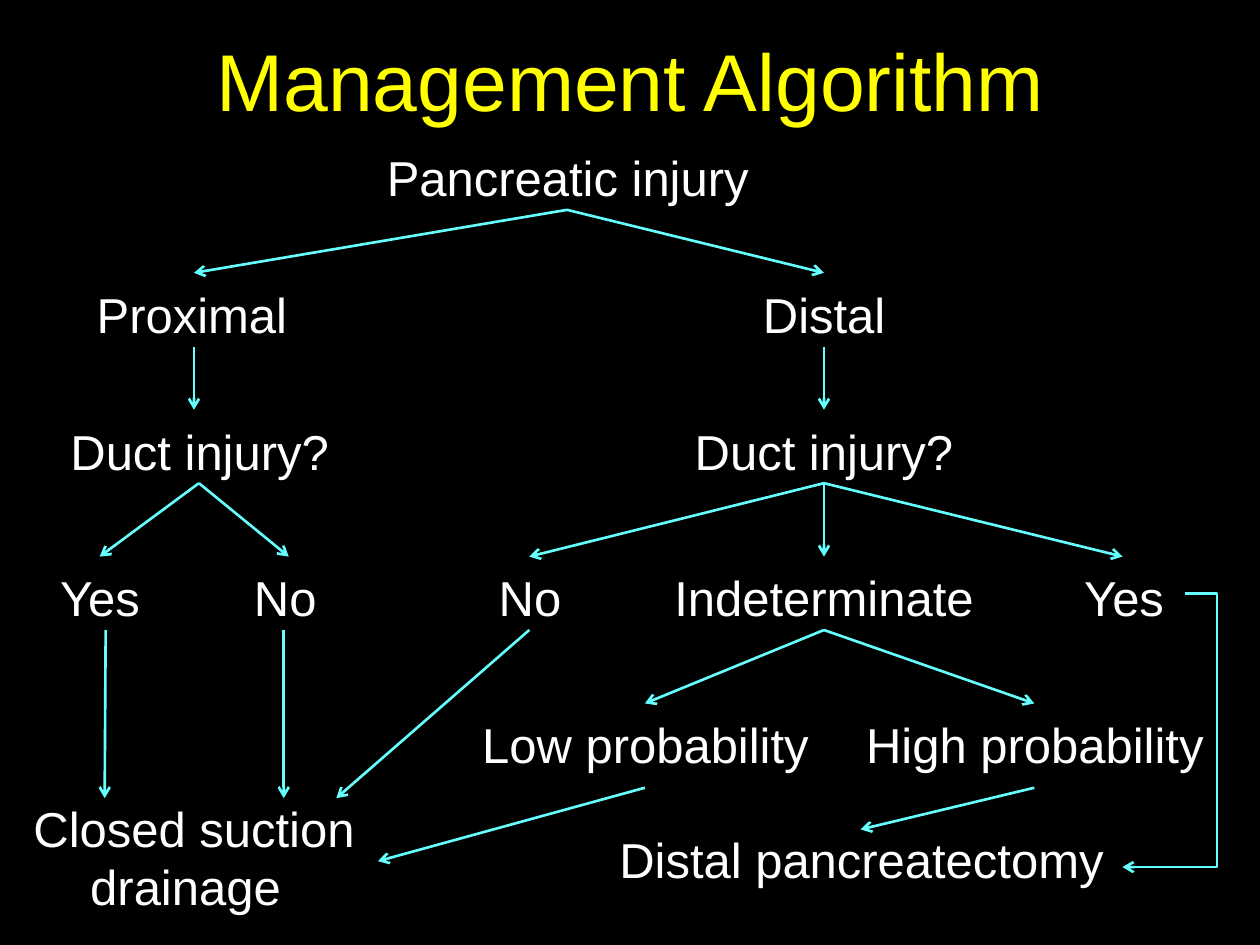
from dataclasses import dataclass

from lxml.etree import SubElement
from pptx import Presentation
from pptx.dml.color import RGBColor
from pptx.enum.shapes import MSO_CONNECTOR
from pptx.enum.text import MSO_ANCHOR, PP_ALIGN
from pptx.oxml.ns import qn
from pptx.slide import Slide
from pptx.util import Cm, Pt

BLACK, WHITE, YELLOW, CYAN = "000000", "FFFFFF", "FFFF00", "66FFFF"

# Top and bottom of each level of the tree, in centimetres
ROOT_TOP, ROOT_END = 2.75, 4.23
SITE_TOP, SITE_END = 5.5, 6.99
DUCT_TOP, DUCT_END = 8.26, 9.74
ANSWER_TOP, ANSWER_END = 11.22, 12.7
CHANCE_TOP, CHANCE_END = 14.18, 15.88
DRAINAGE_TOP, RESECTION_TOP = 16.09, 16.72
DISTAL_AXIS = 16.61


@dataclass
class Label:
    lines: tuple[str, ...]
    left: float
    top: float
    width: float
    height: float = 1.48
    align: PP_ALIGN = PP_ALIGN.CENTER
    spacing: float = 1.0
    size: float = 28
    color: str = WHITE
    anchor: MSO_ANCHOR = MSO_ANCHOR.TOP
    inset_top: float = 0.23


@dataclass
class Arrow:
    start: tuple[float, float]
    end: tuple[float, float]
    bend: float | None = None


TITLE = Label(("Management Algorithm",), 0, 0, 25.4, 3.18, size=46, color=YELLOW,
              anchor=MSO_ANCHOR.MIDDLE, inset_top=0.13)

LABELS = [
    Label(("Pancreatic injury",), 7.42, ROOT_TOP, 8.05),
    Label(("Proximal",), 1.7, SITE_TOP, 4.45, align=PP_ALIGN.LEFT),
    Label(("Distal",), 13.34, SITE_TOP, 6.55),
    Label(("Duct injury?",), 0.85, DUCT_TOP, 6.35),
    Label(("Duct injury?",), 12.7, DUCT_TOP, 7.82),
    Label(("Yes",), 0.64, ANSWER_TOP, 2.75),
    Label(("No",), 4.87, ANSWER_TOP, 1.91, align=PP_ALIGN.LEFT),
    Label(("No",), 9.73, ANSWER_TOP, 1.91),
    Label(("Indeterminate",), 12.7, ANSWER_TOP, 7.82),
    Label(("Yes",), 21.39, ANSWER_TOP, 2.54),
    Label(("Low probability",), 9.3, CHANCE_TOP, 7.42, 1.7),
    Label(("High probability",), 17.15, CHANCE_TOP, 7.42, 1.7),
    Label(("Closed suction", "drainage"), 0.2, DRAINAGE_TOP, 7.42, 2.54, spacing=0.8),
    Label(("Distal pancreatectomy",), 12.07, RESECTION_TOP, 10.59, spacing=0.8),
]

ARROWS = [
    # Site of the injury
    Arrow((11.43, ROOT_END), (3.91, SITE_TOP)),
    Arrow((11.43, ROOT_END), (DISTAL_AXIS, SITE_TOP)),
    # Question about the duct
    Arrow((3.91, SITE_END), (3.91, DUCT_TOP)),
    Arrow((DISTAL_AXIS, SITE_END), (DISTAL_AXIS, DUCT_TOP)),
    # Answers
    Arrow((4.01, DUCT_END), (2.01, ANSWER_TOP)),
    Arrow((4.01, DUCT_END), (5.82, ANSWER_TOP)),
    Arrow((DISTAL_AXIS, DUCT_END), (10.67, ANSWER_TOP)),
    Arrow((DISTAL_AXIS, DUCT_END), (DISTAL_AXIS, ANSWER_TOP)),
    Arrow((DISTAL_AXIS, DUCT_END), (22.63, ANSWER_TOP)),
    # Probability of duct injury
    Arrow((DISTAL_AXIS, ANSWER_END), (13, CHANCE_TOP)),
    Arrow((DISTAL_AXIS, ANSWER_END), (20.85, CHANCE_TOP)),
    # Treatments
    Arrow((2.13, ANSWER_END), (2.11, DRAINAGE_TOP)),
    Arrow((5.72, ANSWER_END), (5.72, DRAINAGE_TOP)),
    Arrow((10.67, ANSWER_END), (6.78, DRAINAGE_TOP)),
    Arrow((13, CHANCE_END), (7.62, 17.36)),
    Arrow((20.85, CHANCE_END), (17.35, RESECTION_TOP)),
    Arrow((23.9, 11.96), (22.63, 17.48), bend=-0.5),
]


def set_color(target, color: str) -> None:
    """Make a fill solid, or colour a font, from a hex string."""
    if hasattr(target, "solid"):
        target.solid()
        target = target.fore_color
    else:
        target = target.color
    target.rgb = RGBColor.from_string(color)


def draw_label(page: Slide, label: Label) -> None:
    box = page.shapes.add_textbox(Cm(label.left), Cm(label.top),
                                  Cm(label.width), Cm(label.height))
    frame = box.text_frame
    frame.word_wrap = True
    frame.vertical_anchor = label.anchor
    frame.margin_top = Cm(label.inset_top)
    for number, line in enumerate(label.lines):
        para = frame.add_paragraph() if number else frame.paragraphs[0]
        para.alignment = label.align
        para.line_spacing = label.spacing
        if number:
            # A continuation line is indented from the left
            para.alignment = PP_ALIGN.LEFT
            para.space_before = Pt(6.4)
            para._p.get_or_add_pPr().set("marL", str(Cm(1.37)))
        span = para.add_run()
        span.text = line
        for name, value in {"name": "Arial", "size": Pt(label.size)}.items():
            setattr(span.font, name, value)
        set_color(span.font, label.color)


def draw_arrow(page: Slide, arrow: Arrow) -> None:
    kind = MSO_CONNECTOR.STRAIGHT if arrow.bend is None else MSO_CONNECTOR.ELBOW
    points = [Cm(value) for value in (*arrow.start, *arrow.end)]
    connector = page.shapes.add_connector(kind, *points)
    set_color(connector.line.fill, CYAN)
    connector.line.width = Pt(1.5)
    properties = connector._element.spPr
    SubElement(properties.find(qn("a:ln")), qn("a:tailEnd"), type="arrow")
    SubElement(properties, qn("a:effectLst"))
    if arrow.bend is not None:
        guides = properties.find(qn("a:prstGeom")).find(qn("a:avLst"))
        SubElement(guides, qn("a:gd"), name="adj1", fmla=f"val {int(arrow.bend * 100000)}")


def main() -> None:
    deck = Presentation()
    deck.slide_width, deck.slide_height = Cm(25.4), Cm(19.05)
    page = deck.slides.add_slide(deck.slide_layouts[6])
    set_color(page.background.fill, BLACK)
    for label in (TITLE, *LABELS):
        draw_label(page, label)
    for arrow in ARROWS:
        draw_arrow(page, arrow)
    deck.save("out.pptx")


if __name__ == "__main__":
    main()
